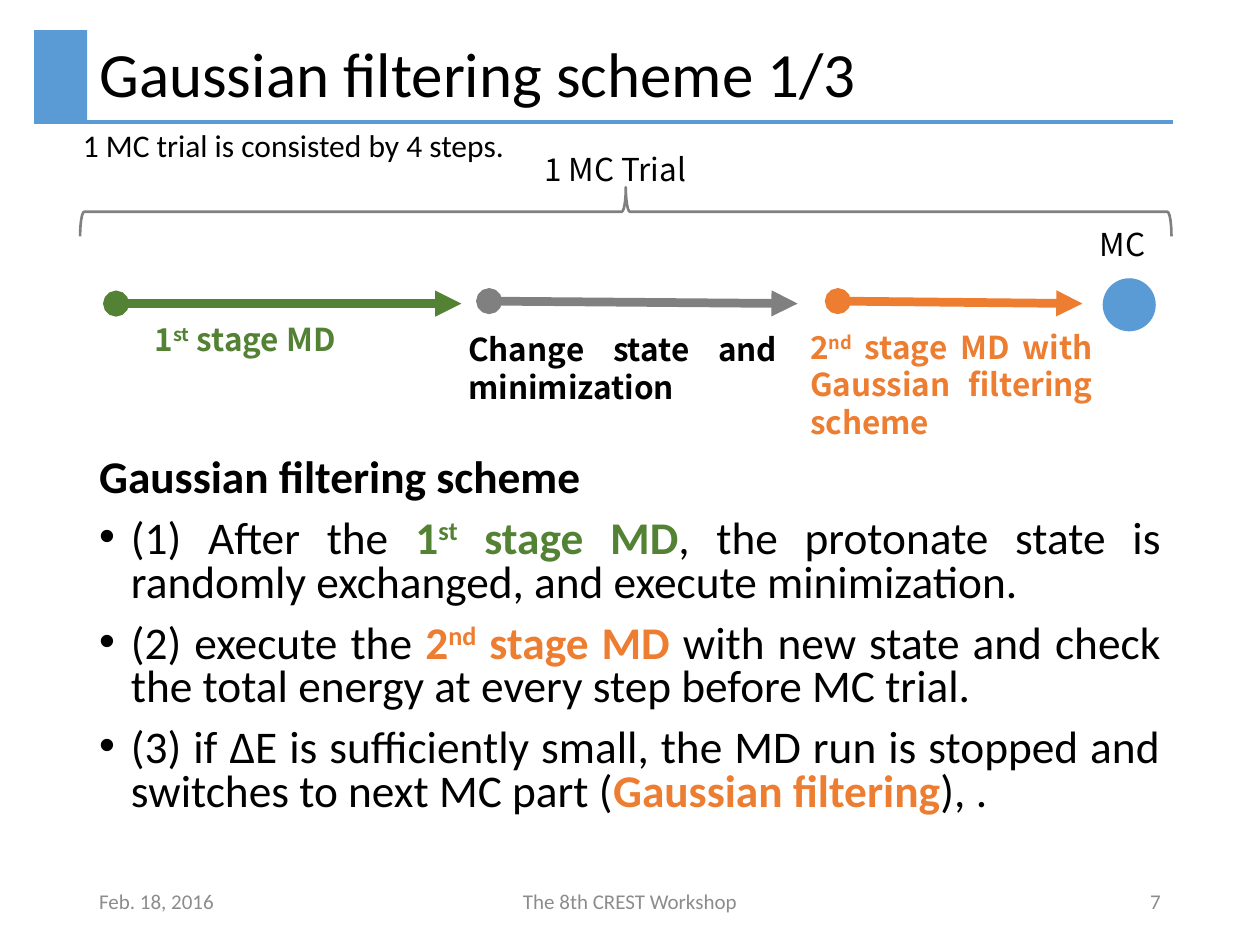
import pptx
import pptx.util
import pptx.dml.color
import pptx.enum.shapes
import pptx.enum.text
import pptx.oxml
import pptx.oxml.ns
import lxml.etree

Cm, Pt = pptx.util.Cm, pptx.util.Pt
RGBColor = pptx.dml.color.RGBColor
Align = pptx.enum.text.PP_ALIGN
Anchor = pptx.enum.text.MSO_ANCHOR
Shape = pptx.enum.shapes.MSO_SHAPE
qn = pptx.oxml.ns.qn

BLUE = RGBColor(0x5B, 0x9B, 0xD5)
GREEN = RGBColor(0x54, 0x82, 0x35)
ORANGE = RGBColor(0xED, 0x7D, 0x31)
GRAY = RGBColor(0x80, 0x80, 0x80)
FOOTER_GRAY = RGBColor(0x8C, 0x8C, 0x8C)
BLACK = RGBColor(0, 0, 0)
CJK = "Noto Sans CJK JP"


def write(para, spans, size=18, font="Calibri", color=BLACK, bold=False, **layout):
    """Fill a paragraph; a span is text or (text, colour), with ^ around superscripts."""
    for name, value in layout.items():
        setattr(para, name, value)
    for item in spans:
        text, tint = (item, color) if isinstance(item, str) else item
        looks = {"size": Pt(size), "name": font, "bold": bold or tint != color}
        for index, piece in enumerate(text.split("^")):
            span = para.add_run()
            span.text = piece
            for name, value in looks.items():
                setattr(span.font, name, value)
            span.font.color.rgb = tint
            if index % 2:
                span.font._element.set("baseline", "30000")


def add_line(page, start, end, color, width):
    line = page.shapes.add_connector(
        pptx.enum.shapes.MSO_CONNECTOR.STRAIGHT, *map(Cm, start + end))
    line.line.color.rgb = color
    line.line.width = Pt(width)
    lxml.etree.SubElement(line._element.spPr, qn("a:effectLst"))
    return line


deck = pptx.Presentation()
deck.slide_width, deck.slide_height = Cm(25.4), Cm(19.05)
page = deck.slides.add_slide(deck.slide_layouts[5])

# Title with its blue block and rule
title = page.shapes.title
for name, value in {"left": 1.75, "top": 0.61, "width": 21.9, "height": 1.88}.items():
    setattr(title, name, Cm(value))
title.text_frame.vertical_anchor = Anchor.MIDDLE
write(title.text_frame.paragraphs[0], ["Gaussian filtering scheme 1/3"],
      size=36, alignment=Align.LEFT, line_spacing=0.9)
add_line(page, (0.69, 2.46), (23.65, 2.46), BLUE, 2)

# Title block and the final MC step
for kind, *place in [(Shape.RECTANGLE, 0.69, 0.61, 1.07, 1.88),
                     (Shape.OVAL, 22.23, 5.61, 1.07, 1.07)]:
    mark = page.shapes.add_shape(kind, *map(Cm, place))
    mark.shadow.inherit = False
    mark.fill.solid()
    mark.fill.fore_color.rgb = BLUE
    mark.line.fill.background()

# Brace over the whole trial
brace = page.shapes.add_shape(Shape.LEFT_BRACE, Cm(12.12), Cm(-6.73), Cm(0.99), Cm(22))
brace.rotation = 90
brace.shadow.inherit = False
brace.fill.background()
brace.line.color.rgb = GRAY
brace.line.width = Pt(1.5)

# Stage arrows
for start, end, color in [((2.34, 6.12), (9.3, 6.12), GREEN),
                          ((9.86, 6.07), (16.08, 6.12), GRAY),
                          ((16.89, 6.07), (21.82, 6.12), ORANGE)]:
    arrow = add_line(page, start, end, color, 5)
    outline = arrow.line._get_or_add_ln()
    for tag, kind in [("a:headEnd", "oval"), ("a:tailEnd", "triangle")]:
        lxml.etree.SubElement(outline, qn(tag), type=kind)

# Labels and footer
stage = {"font": CJK, "alignment": Align.JUSTIFY}
footer = {"size": 12, "color": FOOTER_GRAY}
labels = [
    ((1.42, 2.41, 22.66, 1.02), "1 MC trial is consisted by 4 steps.", {}),
    ((10.72, 2.9, 3.68, 1.02), "1 MC Trial", stage),
    ((21.92, 4.42, 1.63, 1.02), "MC", stage),
    ((2.87, 6.32, 6.83, 1.02), "1^st^ stage MD", {**stage, "color": GREEN, "bold": True}),
    ((9.19, 6.53, 6.73, 1.8), "Change state and minimization", {**stage, "bold": True}),
    ((16.08, 6.48, 6.2, 2.57), "2^nd^ stage MD with Gaussian filtering scheme",
     {**stage, "color": ORANGE, "bold": True}),
    ((1.75, 17.65, 5.72, 1.02), "Feb. 18, 2016", footer),
    ((8.41, 17.65, 8.58, 1.02), "The 8th CREST Workshop", {**footer, "alignment": Align.CENTER}),
    ((17.93, 17.65, 5.72, 1.02), "7", {**footer, "alignment": Align.RIGHT}),
]
for place, text, looks in labels:
    box = page.shapes.add_textbox(*map(Cm, place))
    box.text_frame.word_wrap = True
    if looks.get("size") == 12:
        box.text_frame.vertical_anchor = Anchor.MIDDLE
    write(box.text_frame.paragraphs[0], [text], **looks)

# Description of the scheme
body = page.shapes.add_textbox(Cm(1.75), Cm(9.12), Cm(21.9), Cm(8.05)).text_frame
body.word_wrap = True
body_format = {"size": 25.9, "alignment": Align.JUSTIFY,
               "line_spacing": 0.8, "space_before": Pt(10)}
write(body.paragraphs[0], ["Gaussian filtering scheme"], bold=True, **body_format)
steps = [
    ["(1) After the ", ("1^st^ stage MD", GREEN),
     ", the protonate state is randomly exchanged, and execute minimization."],
    ["(2) execute the ", ("2^nd^ stage MD", ORANGE),
     " with new state and check the total energy at every step before MC trial."],
    ["(3) if ∆E is sufficiently small, the MD run is stopped and switches to next MC part (",
     ("Gaussian filtering", ORANGE), "), ."],
]
for spans in steps:
    para = body.add_paragraph()
    write(para, spans, **body_format)
    settings = para._p.get_or_add_pPr()
    settings.set("marL", str(Cm(0.64)))
    settings.set("indent", str(-Cm(0.64)))
    lxml.etree.SubElement(settings, qn("a:buFont"), typeface="Arial")
    lxml.etree.SubElement(settings, qn("a:buChar"), char="•")

deck.save("out.pptx")
